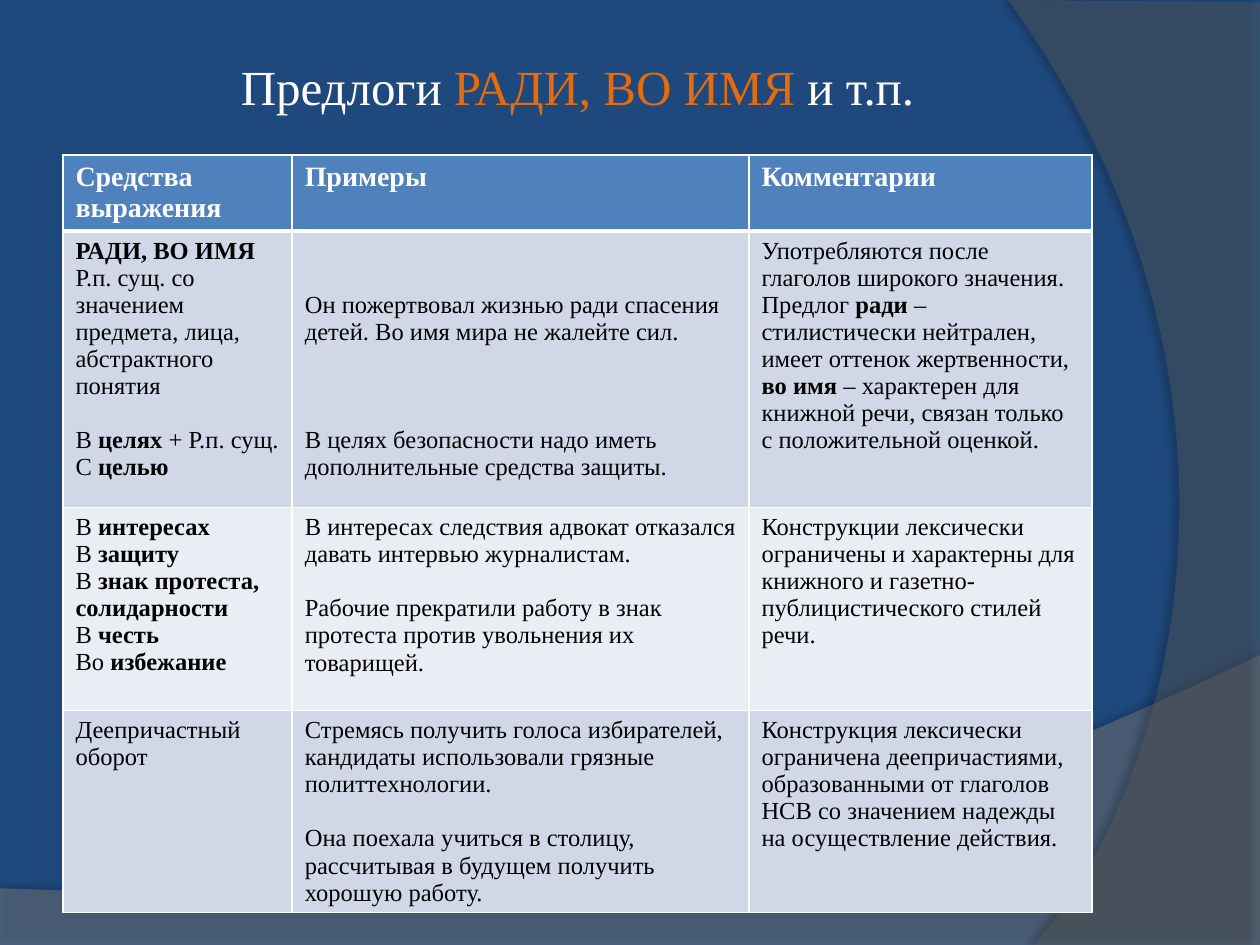
"""Builds a slide on Russian prepositions of purpose with a table of examples."""
from lxml import etree
from pptx import Presentation
from pptx.dml.color import RGBColor
from pptx.enum import text as t
from pptx.oxml import ns
from pptx.util import Pt

FONT = "Times New Roman"
TITLE = "Предлоги *РАДИ, ВО ИМЯ *и т.п."
HEAD = ["Средства выражения", "Примеры", "Комментарии"]
BODY = [
    [
        ["*РАДИ, ВО ИМЯ *Р.п. сущ. со значением предмета, лица, абстрактного понятия",
         ("В *целях* + Р.п. сущ.", 1), "С *целью*"],
        [("Он пожертвовал жизнью ради спасения детей. Во имя мира не жалейте сил.", 2),
         ("В целях безопасности надо иметь дополнительные средства защиты.", 3)],
        ["Употребляются после глаголов широкого значения. Предлог *ради* – "
         "стилистически нейтрален, имеет оттенок жертвенности, *во имя *– характерен "
         "для книжной речи, связан только с положительной оценкой."],
    ],
    [
        ["В *интересах*", "В* защиту*", "В* знак протеста, солидарности*",
         "В* честь*", "Во* избежание*"],
        ["В интересах следствия адвокат отказался давать интервью журналистам.",
         ("Рабочие прекратили работу в знак протеста против увольнения их товарищей.", 1)],
        ["Конструкции лексически ограничены и характерны для книжного и "
         "газетно-публицистического стилей речи."],
    ],
    [
        ["Деепричастный оборот"],
        ["Стремясь получить голоса избирателей, кандидаты использовали грязные "
         "политтехнологии.",
         ("Она поехала учиться в столицу, рассчитывая в будущем получить хорошую работу.", 1)],
        ["Конструкция лексически ограничена деепричастиями, образованными от глаголов "
         "НСВ со значением надежды на осуществление действия."],
    ],
]
COLS = [131, 261, 196]
ROWS = [43.5, 158, 116, 115.5]
BANDS = ["D0D8E8", "E9EDF4"]
LINE = 15.5
WAVES = [
    dict(start=(720, 374.4), curve=[(402.5, 524.9), (281.5, 517.7), (0, 507.6)],
         rest=[(0, 540), (720, 540)], fill="7F7F7F", alpha=45,
         shade=35, dist=3.5, turn=270),
    dict(start=(591.1, 540), curve=[(673.2, 445.7), (733, 216), (576, 0)],
         rest=[(720, 1.4), (720, 540)], fill="5E5E5E", alpha=40,
         shade=45, dist=4, turn=180),
]


def paint(fill, tone):
    fill.solid()
    fill.fore_color.rgb = RGBColor.from_string(tone)


def node(up, tag, **atts):
    return etree.SubElement(up, ns.qn(tag), {k: str(v) for k, v in atts.items()})


def write(para, words, size=14, tone="000000", mark=None, bold=False, gap=0):
    """Write words, with the parts between asterisks bold or in the mark colour."""
    para.space_before = Pt(gap)
    for i, part in enumerate(words.split("*")):
        if not part:
            continue
        run = para.add_run()
        run.text = part
        font = run.font
        font.name, font.size = FONT, Pt(size)
        star = i % 2 == 1
        font.bold = bold or (star and not mark)
        font.color.rgb = RGBColor.from_string(mark if star and mark else tone)


def bend(a, b, c, d, steps=60):
    """Return points along a cubic curve."""
    spots = []
    for i in range(1, steps + 1):
        s = i / steps
        r = 1 - s
        spots.append(tuple(r**3 * p + 3 * r * r * s * q + 3 * r * s * s * v + s**3 * w
                           for p, q, v, w in zip(a, b, c, d)))
    return spots


def wave(slide, depth, start, curve, rest, fill, alpha, shade, dist, turn):
    """Draw one see-through wave with a soft shadow behind the text."""
    spots = bend(start, *curve) + rest
    pen = slide.shapes.build_freeform(Pt(start[0]), Pt(start[1]))
    pen.add_line_segments([(Pt(x), Pt(y)) for x, y in spots], close=True)
    shape = pen.convert_to_shape()
    paint(shape.fill, fill)
    shape.line.fill.background()
    shape.shadow.inherit = False
    props = shape._element.spPr
    tint = props.find(ns.qn("a:solidFill"))[0]
    node(tint, "a:alpha", val=alpha * 1000)
    glow = node(props.find(ns.qn("a:effectLst")), "a:outerShdw", blurRad=Pt(4),
                dist=Pt(dist), dir=turn * 60000, algn="ctr", rotWithShape=0)
    node(node(glow, "a:srgbClr", val="000000"), "a:alpha", val=shade * 1000)
    slide.shapes._spTree.insert(2 + depth, shape._element)


def edge(cell, base):
    """Give a cell white borders, with its own width at the base."""
    props = cell._tc.get_or_add_tcPr()
    for i, (side, wide) in enumerate(zip("LRTB", (1, 1, 1, base))):
        line = node(props, "a:ln" + side, w=Pt(wide))
        node(node(line, "a:solidFill"), "a:srgbClr", val="FFFFFF")
        props.insert(i, line)


def fill_cell(cell, items, back, base=1, **form):
    """Fill a cell with paragraphs, each with blank lines of space above it."""
    paint(cell.fill, back)
    edge(cell, base)
    frame = cell.text_frame
    for i, item in enumerate(items):
        words, skip = (item, 0) if isinstance(item, str) else item
        if i == 0:
            cell.margin_top = Pt(3.6 + skip * LINE)
            write(frame.paragraphs[0], words, **form)
        else:
            write(frame.add_paragraph(), words, gap=skip * LINE, **form)


def main():
    deck = Presentation()
    deck.slide_width, deck.slide_height = Pt(720), Pt(540)
    slide = deck.slides.add_slide(deck.slide_layouts[5])
    paint(slide.background.fill, "1F497D")
    for depth, form in enumerate(WAVES):
        wave(slide, depth, **form)

    title = slide.shapes.title
    title.left, title.top, title.width, title.height = Pt(36), Pt(21.6), Pt(588), Pt(55.4)
    frame = title.text_frame
    frame.vertical_anchor = t.MSO_ANCHOR.MIDDLE
    frame.margin_left = frame.margin_right = Pt(3.6)
    para = frame.paragraphs[0]
    para.alignment = t.PP_ALIGN.CENTER
    write(para, TITLE, size=28, tone="FFFFFF", mark="E46C0A")

    grid = slide.shapes.add_table(len(ROWS), len(COLS), Pt(36), Pt(88.5),
                                  Pt(sum(COLS)), Pt(sum(ROWS))).table
    for col, wide in zip(grid.columns, COLS):
        col.width = Pt(wide)
    for row, high in zip(grid.rows, ROWS):
        row.height = Pt(high)
    for c, words in enumerate(HEAD):
        fill_cell(grid.cell(0, c), [words], "4F81BD", base=3,
                  size=16, tone="FFFFFF", bold=True)
    for r, row in enumerate(BODY):
        for c, items in enumerate(row):
            fill_cell(grid.cell(r + 1, c), items, BANDS[r % 2])
    deck.save("out.pptx")


if __name__ == "__main__":
    main()
